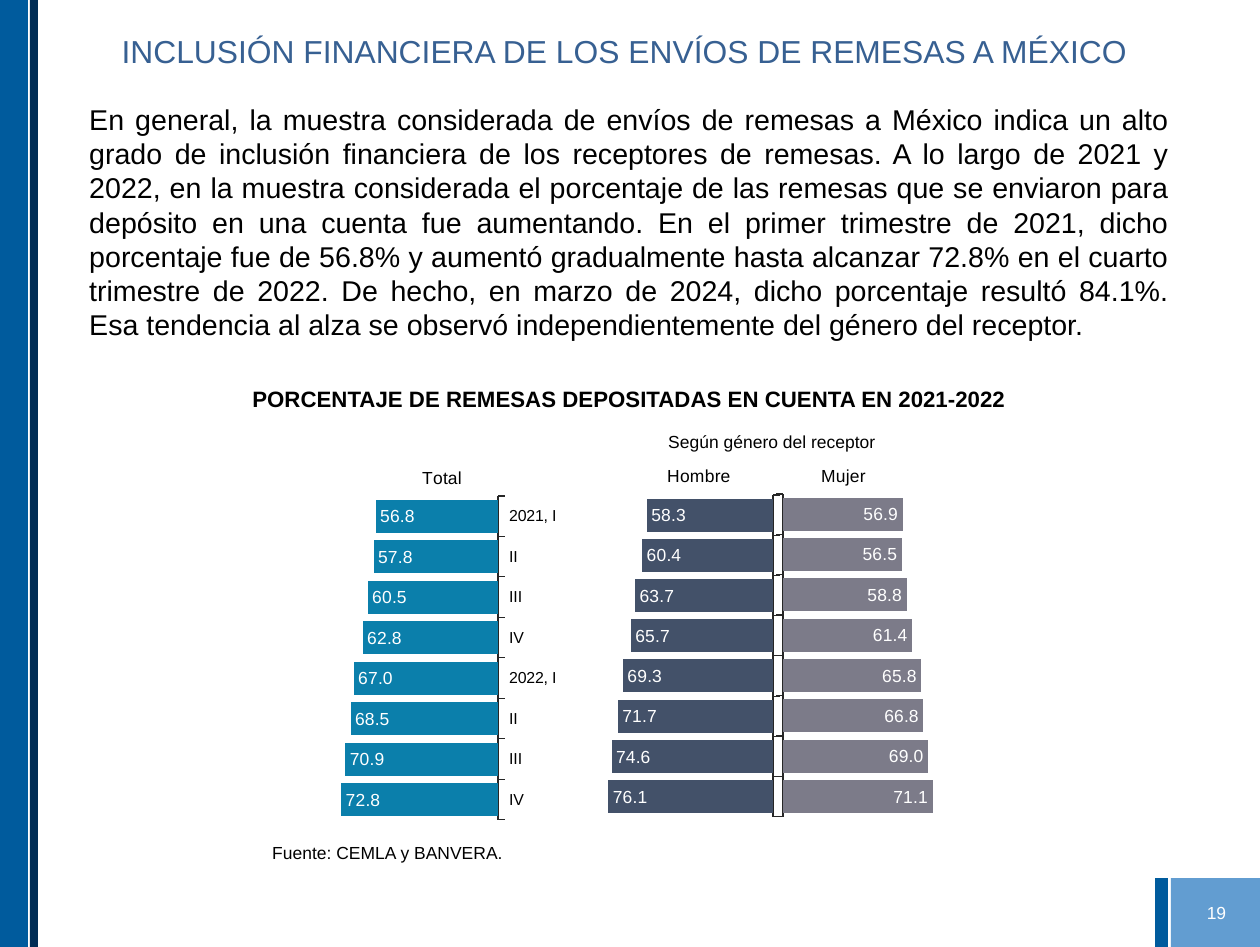
from dataclasses import dataclass

from lxml.etree import SubElement
from pptx import Presentation
from pptx.chart.data import CategoryChartData
from pptx.dml.color import RGBColor
from pptx.enum.chart import XL_CHART_TYPE, XL_LABEL_POSITION, XL_TICK_LABEL_POSITION, XL_TICK_MARK
from pptx.enum.shapes import MSO_SHAPE
from pptx.enum.text import MSO_ANCHOR, PP_ALIGN
from pptx.oxml import parse_xml
from pptx.oxml.ns import nsdecls, qn
from pptx.util import Emu, Pt

PX = 8000
WIDTH, HEIGHT = 1260, 947


@dataclass(frozen=True)
class Theme:
    """Colours, type sizes and font of the slide."""
    font: str = "Arial"
    band: str = "005B9D"
    stripe: str = "012D55"
    number_box: str = "629DD1"
    title: str = "376092"
    ink: str = "000000"
    white: str = "FFFFFF"
    axis: str = "262626"
    total: str = "0B7FAB"
    men: str = "435169"
    women: str = "7C7B89"
    title_size: int = 20
    body_size: int = 18
    heading_size: int = 14
    label_size: int = 11
    axis_size: int = 10


THEME = Theme()

BODY = (
    "En general, la muestra considerada de envíos de remesas a México indica un alto grado de "
    "inclusión financiera de los receptores de remesas. A lo largo de 2021 y 2022, en la muestra "
    "considerada el porcentaje de las remesas que se enviaron para depósito en una cuenta fue "
    "aumentando. En el primer trimestre de 2021, dicho porcentaje fue de 56.8% y aumentó "
    "gradualmente hasta alcanzar 72.8% en el cuarto trimestre de 2022. De hecho, en marzo de 2024, "
    "dicho porcentaje resultó 84.1%. Esa tendencia al alza se observó independientemente del "
    "género del receptor."
)
QUARTERS = ["2021, I", "II", "III", "IV", "2022, I", "II", "III", "IV"]
ROWS = [str(row) for row in range(1, 9)]
TOTAL = [56.8, 57.8, 60.5, 62.8, 67.0, 68.5, 70.9, 72.8]
MEN = [58.3, 60.4, 63.7, 65.7, 69.3, 71.7, 74.6, 76.1]
WOMEN = [56.9, 56.5, 58.8, 61.4, 65.8, 66.8, 69.0, 71.1]


def emu(box):
    """Turn px lengths into EMU."""
    return [Emu(length * PX) for length in box]


def style_font(font, size, color=THEME.ink, bold=False):
    """Give a font its face, size, colour and weight."""
    font.name = THEME.font
    font.size = Pt(size)
    font.bold = bold
    font.color.rgb = RGBColor.from_string(color)


def write_text(frame, text, size=THEME.label_size, color=THEME.ink, bold=False,
               align=PP_ALIGN.CENTER, line_spacing=None):
    """Write one formatted paragraph into a text frame."""
    paragraph = frame.paragraphs[0]
    paragraph.alignment = align
    if line_spacing:
        paragraph.line_spacing = Pt(line_spacing)
    run = paragraph.add_run()
    run.text = text
    style_font(run.font, size, color, bold)


def add_text(slide, box, text, anchor=MSO_ANCHOR.MIDDLE, **text_format):
    """Add a wrapping text box."""
    frame = slide.shapes.add_textbox(*emu(box)).text_frame
    frame.word_wrap = True
    frame.vertical_anchor = anchor
    write_text(frame, text, **text_format)


def add_block(slide, box, color):
    """Add a plain filled rectangle."""
    shape = slide.shapes.add_shape(MSO_SHAPE.RECTANGLE, *emu(box))
    shape.shadow.inherit = False
    shape.fill.solid()
    shape.fill.fore_color.rgb = RGBColor.from_string(color)
    shape.line.fill.background()


def add_frame(slide, box):
    """Add the side bands and the page number corner."""
    left, top, width, height = box
    add_block(slide, (left, top, 28, height), THEME.band)
    add_block(slide, (left + 30, top, 8, height), THEME.stripe)
    corner_top = top + height - 69
    add_block(slide, (left + width - 105, corner_top, 13, 69), THEME.band)
    add_block(slide, (left + width - 89, corner_top, 89, 69), THEME.number_box)
    add_text(slide, (left + width - 82, corner_top + 9, 77, 50), "19", color=THEME.white)


def add_heading(slide, box):
    """Place the title and the paragraph under it."""
    left, top, width, height = box
    title = slide.shapes.title
    title.left, title.top, title.width, title.height = emu((left, top, width, 69))
    frame = title.text_frame
    frame.word_wrap = True
    frame.vertical_anchor = MSO_ANCHOR.TOP
    frame.margin_left, frame.margin_top, frame.margin_right = emu((11, 6, 20))
    write_text(frame, "INCLUSIÓN FINANCIERA DE LOS ENVÍOS DE REMESAS A MÉXICO",
               size=THEME.title_size, color=THEME.title)
    add_text(slide, (left, top + 70, width, height - 70), BODY, anchor=MSO_ANCHOR.TOP,
             size=THEME.body_size, align=PP_ALIGN.JUSTIFY, line_spacing=21.6)


def set_layout(element, index, **values):
    """Give a chart part a manual layout."""
    for old_layout in element.findall(qn("c:layout")):
        element.remove(old_layout)
    layout = parse_xml(f"<c:layout {nsdecls('c')}><c:manualLayout/></c:layout>")
    for name, value in values.items():
        SubElement(layout[0], qn(f"c:{name}"), val=str(value))
    element.insert(index, layout)


def add_bars(slide, box, name, categories, values, color, plot, title_at, mirrored=True, labelled=False):
    """Add one bar chart, with plot and title placed in px inside its box."""
    width, height = box[2:]
    chart_data = CategoryChartData(number_format="0.0")
    chart_data.categories = categories
    chart_data.add_series(name, values)
    chart = slide.shapes.add_chart(XL_CHART_TYPE.BAR_CLUSTERED, *emu(box), chart_data).chart
    style_font(chart.font, THEME.axis_size)
    chart.has_legend = False
    chart.has_title = True
    write_text(chart.chart_title.text_frame, name)
    set_layout(chart.chart_title.element, 1, xMode="edge", yMode="edge",
               x=title_at[0] / width, y=title_at[1] / height)
    set_layout(chart.element.find(".//" + qn("c:plotArea")), 0, layoutTarget="inner",
               xMode="edge", yMode="edge", x=plot[0] / width, y=plot[1] / height,
               w=plot[2] / width, h=plot[3] / height)

    value_axis = chart.value_axis
    value_axis.minimum_scale, value_axis.maximum_scale = 0, 85
    value_axis.has_major_gridlines = False
    value_axis.reverse_order = mirrored
    value_axis.visible = False

    category_axis = chart.category_axis
    category_axis.reverse_order = True
    category_axis.major_tick_mark = XL_TICK_MARK.OUTSIDE
    category_axis.format.line.color.rgb = RGBColor.from_string(THEME.axis)
    category_axis.format.line.width = Pt(0.75)
    style_font(category_axis.tick_labels.font, THEME.axis_size)
    if not labelled:
        category_axis.tick_label_position = XL_TICK_LABEL_POSITION.NONE

    bars = chart.plots[0]
    bars.gap_width = 22
    bars.vary_by_categories = False
    series = bars.series[0]
    series.format.fill.solid()
    series.format.fill.fore_color.rgb = RGBColor.from_string(color)
    labels = series.data_labels
    labels.show_value = True
    labels.position = XL_LABEL_POSITION.INSIDE_END
    labels.number_format = "0.0"
    labels.number_format_is_linked = False
    style_font(labels.font, THEME.label_size, THEME.white)


def add_chart_panel(slide, box):
    """Place the heading, the three bar charts and the source line."""
    left, top, width, height = box
    add_text(slide, (left, top, width, 47), "PORCENTAJE DE REMESAS DEPOSITADAS EN CUENTA EN 2021-2022",
             size=THEME.heading_size, bold=True)
    add_bars(slide, (left + 185, top + 48, 394, 410), "Total", QUARTERS, TOTAL, THEME.total,
             (0, 73, 183, 324), (104, 40), labelled=True)
    add_bars(slide, (left + 564, top + 67, 281, 389), "Mujer", ROWS, WOMEN, THEME.women,
             (89, 52, 179, 323), (124, 19), mirrored=False)
    add_bars(slide, (left + 445, top + 48, 395, 407), "Hombre", ROWS, MEN, THEME.men,
             (14, 72, 184, 322), (89, 38))
    add_text(slide, (left + 517, top + 49, 250, 36), "Según género del receptor")
    add_text(slide, (left + 131, top + height - 36, 314, 36), "Fuente: CEMLA y BANVERA.",
             align=PP_ALIGN.LEFT)


def main():
    """Build the slide and save it."""
    presentation = Presentation()
    presentation.slide_width, presentation.slide_height = emu((WIDTH, HEIGHT))
    slide = presentation.slides.add_slide(presentation.slide_layouts[5])
    add_frame(slide, (0, 0, WIDTH, HEIGHT))
    add_heading(slide, (78, 26, 1102, 441))
    add_chart_panel(slide, (130, 375, 998, 496))
    presentation.save("out.pptx")


if __name__ == "__main__":
    main()
